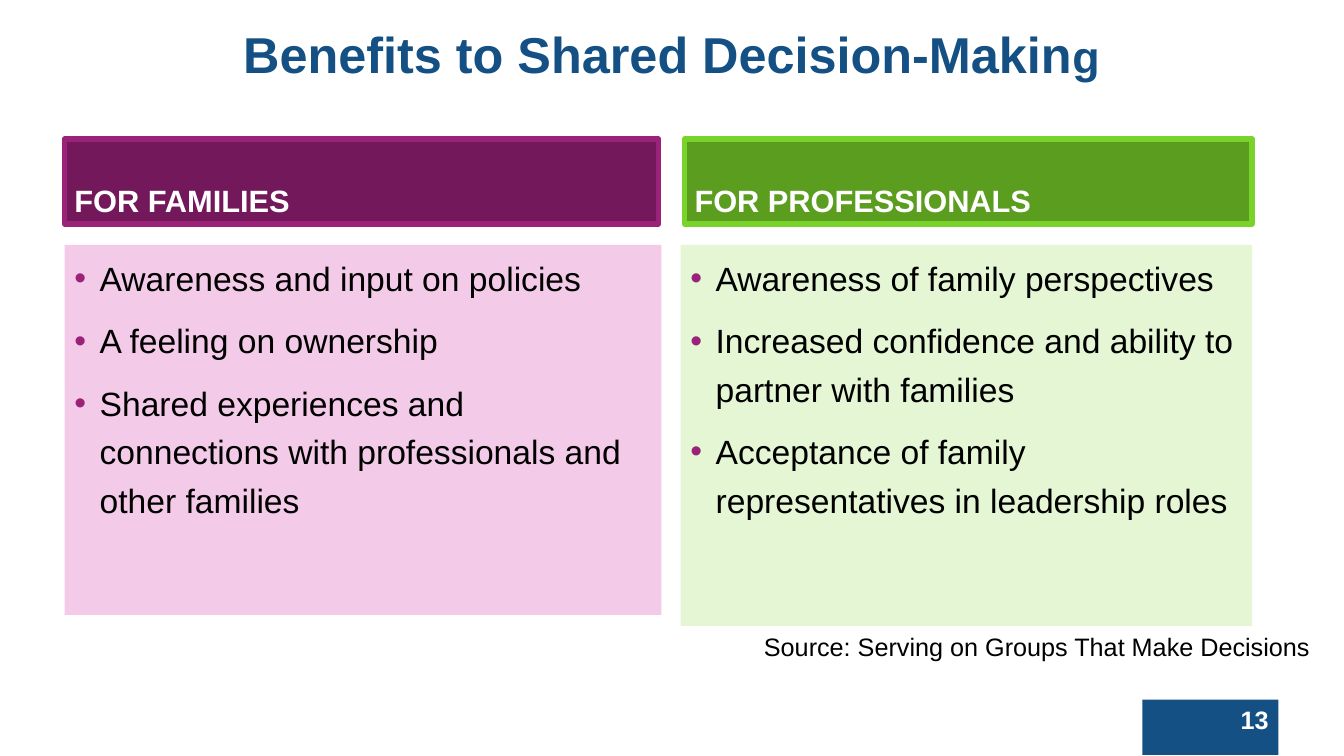
from lxml import etree
from pptx import Presentation
from pptx import util as u
from pptx.dml.color import RGBColor
from pptx.enum import shapes, text
from pptx.oxml import ns

PX = 9144  # EMU per px, 100 px to the inch
FONT = "Arial"
WHITE = RGBColor(0xFF, 0xFF, 0xFF)
BLACK = RGBColor(0x00, 0x00, 0x00)
BLUE = RGBColor(0x14, 0x50, 0x83)
PLUM = RGBColor(0x73, 0x19, 0x5B)
MAGENTA = RGBColor(0x9A, 0x22, 0x79)
PINK = RGBColor(0xF3, 0xCA, 0xE8)
GREEN = RGBColor(0x5B, 0x9E, 0x1F)
LIME = RGBColor(0x79, 0xD3, 0x2A)
PALE_GREEN = RGBColor(0xE4, 0xF6, 0xD4)

LEFT, RIGHT = text.PP_ALIGN.LEFT, text.PP_ALIGN.RIGHT
TOP, BOTTOM = text.MSO_ANCHOR.TOP, text.MSO_ANCHOR.BOTTOM

COLUMNS = [
    dict(heading="FOR FAMILIES", header_box=(64, 138, 589, 84),
         body_box=(64, 243, 592, 367), fill=PLUM, border=MAGENTA, tint=PINK,
         benefits=["Awareness and input on policies",
                   "A feeling on ownership",
                   "Shared experiences and connections with professionals "
                   "and other families"]),
    dict(heading="FOR PROFESSIONALS", header_box=(679, 138, 563, 84),
         body_box=(675, 243, 567, 378), fill=GREEN, border=LIME, tint=PALE_GREEN,
         benefits=["Awareness of family perspectives",
                   "Increased confidence and ability to partner with families",
                   "Acceptance of family representatives in leadership roles"]),
]


def emu(box):
    return [length * PX for length in box]


def set_font(font, size, color, bold=False):
    values = dict(name=FONT, size=u.Pt(size), bold=bold)
    for name, value in values.items():
        setattr(font, name, value)
    font.color.rgb = color


def add_box(slide, box, fill, border=None):
    shape = slide.shapes.add_shape(shapes.MSO_SHAPE.RECTANGLE, *emu(box))
    shape.shadow.inherit = False
    shape.fill.solid()
    shape.fill.fore_color.rgb = fill
    if border is None:
        shape.line.fill.background()
    else:
        shape.line.color.rgb = border
        shape.line.width = u.Pt(4)
    return shape


def write_line(shape, words, size, color, bold=False, alignment=LEFT, anchor=TOP):
    frame = shape.text_frame
    frame.word_wrap = True
    frame.vertical_anchor = anchor
    paragraph = frame.paragraphs[0]
    paragraph.text = words
    paragraph.alignment = alignment
    set_font(paragraph.font, size, color, bold)


def add_bullet(paragraph, color):
    properties = paragraph._p.get_or_add_pPr()
    indent = 25 * PX
    properties.set("marL", str(indent))
    properties.set("indent", str(-indent))
    bullet_color = etree.SubElement(properties, ns.qn("a:buClr"))
    etree.SubElement(bullet_color, ns.qn("a:srgbClr"), val=str(color))
    etree.SubElement(properties, ns.qn("a:buFont"), typeface=FONT)
    etree.SubElement(properties, ns.qn("a:buChar"), char="•")


def add_title(slide, box):
    title = slide.shapes.title
    title.left, title.top, title.width, title.height = emu(box)
    frame = title.text_frame
    frame.word_wrap = True
    frame.vertical_anchor = TOP
    paragraph = frame.paragraphs[0]
    paragraph.alignment = text.PP_ALIGN.CENTER
    paragraph.line_spacing = 0.9
    for words, size in (("Benefits to Shared Decision-Makin", 36), ("g", 32)):
        run = paragraph.add_run()
        run.text = words
        set_font(run.font, size, BLUE, bold=True)


def add_benefits(slide, box, fill, benefits):
    frame = add_box(slide, box, fill).text_frame
    frame.word_wrap = True
    frame.vertical_anchor = TOP
    for index, benefit in enumerate(benefits):
        paragraph = frame.add_paragraph() if index else frame.paragraphs[0]
        paragraph.text = benefit
        paragraph.alignment = LEFT
        paragraph.line_spacing = 1.2
        if index:
            paragraph.space_before = u.Pt(10)
        add_bullet(paragraph, MAGENTA)
        set_font(paragraph.font, 24, BLACK)


def add_column(slide, column):
    header = add_box(slide, column["header_box"], column["fill"], column["border"])
    write_line(header, column["heading"], 22, WHITE, bold=True, anchor=BOTTOM)
    add_benefits(slide, column["body_box"], column["tint"], column["benefits"])


def add_source(slide, box):
    source = slide.shapes.add_textbox(*emu(box))
    write_line(source, "Source: Serving on Groups That Make Decisions", 18, BLACK,
               alignment=RIGHT)


def add_page_number(slide, box):
    write_line(add_box(slide, box, BLUE), "13", 18, WHITE, bold=True, alignment=RIGHT)


def main():
    presentation = Presentation()
    presentation.slide_width, presentation.slide_height = emu((1333, 750))
    slide = presentation.slides.add_slide(presentation.slide_layouts[5])
    add_page_number(slide, (1133, 694, 135, 55))
    add_title(slide, (64, 25, 1204, 100))
    for column in COLUMNS:
        add_column(slide, column)
    add_source(slide, (716, 621, 593, 40))
    presentation.save("out.pptx")


if __name__ == "__main__":
    main()
